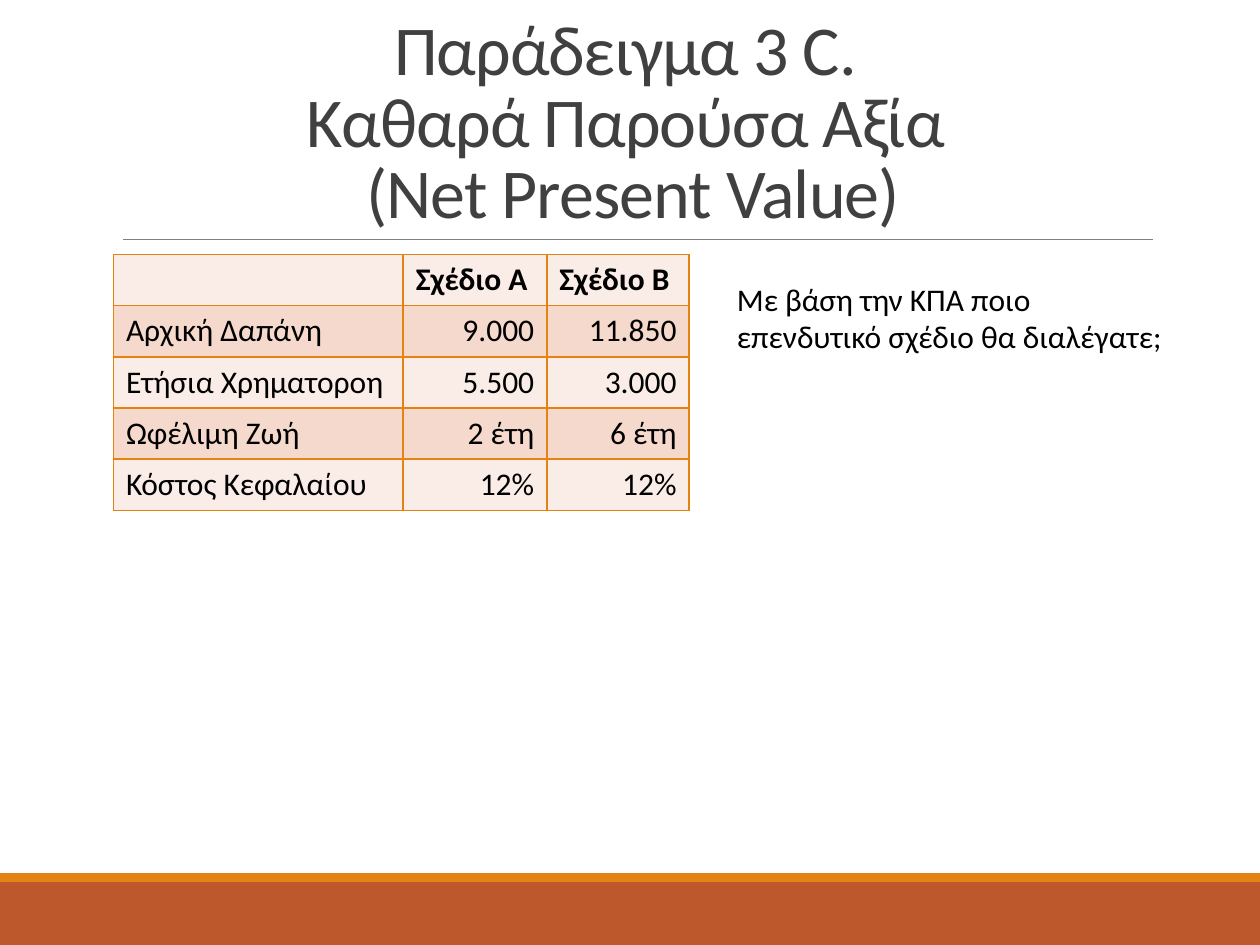
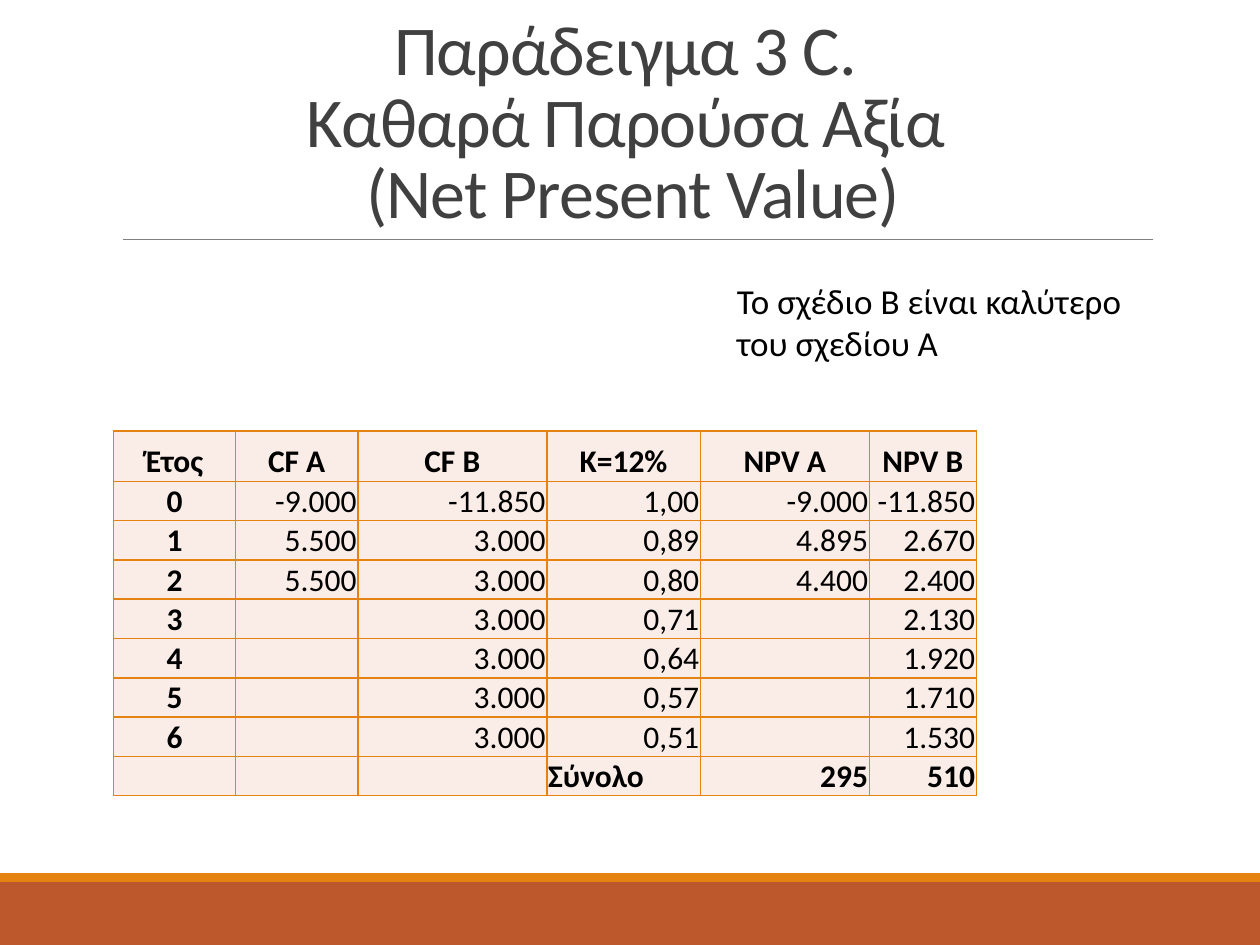
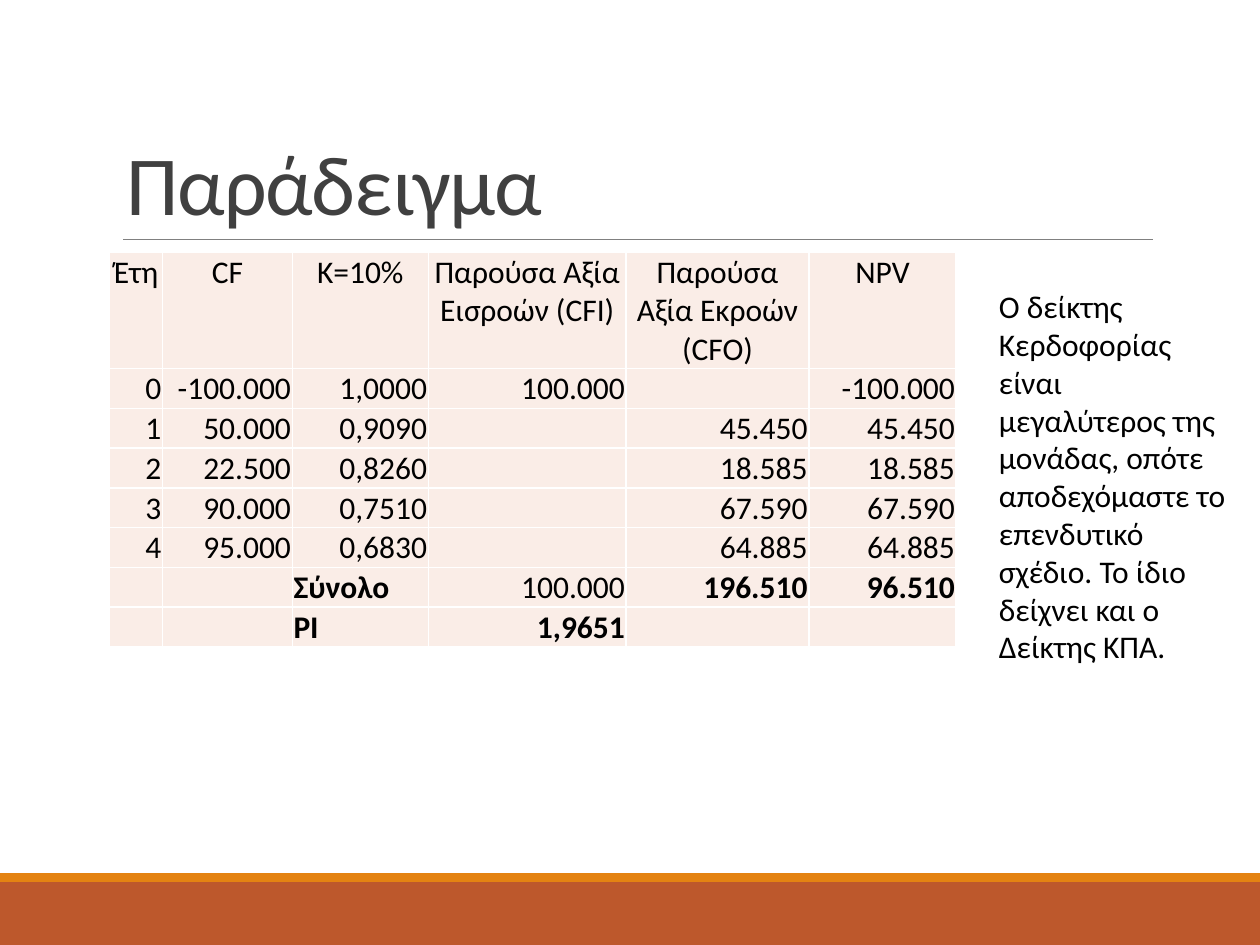
from lxml.etree import SubElement
from pptx import Presentation
from pptx.dml.color import RGBColor
from pptx.enum.shapes import MSO_CONNECTOR as CONN, MSO_SHAPE as SHAPE
from pptx.enum.text import MSO_ANCHOR as ANCHOR, MSO_AUTO_SIZE as AUTO, PP_ALIGN as ALIGN
from pptx.oxml.ns import qn
from pptx.util import Inches, Pt

COLS, ROWS = 100, 75
ALIGNS = {"l": ALIGN.LEFT, "c": ALIGN.CENTER, "r": ALIGN.RIGHT}
RUST, ORANGE, GREY, WHITE = "BD582C", "E48312", "808080", "FFFFFF"
INK, TITLE_INK = "000000", "404040"
PALE, PEACH = "FAEDE7", "F5D9CC"
TIGHT_ROW = 3.12


def rgb(code):
    return RGBColor.from_string(code)


class Deck:
    font = "Calibri"

    def __init__(self):
        self.prs = Presentation()
        self.prs.slide_width, self.prs.slide_height = Inches(10), Inches(7.5)
        self.layout = self.prs.slide_layouts[5]
        self.s = None

    def x(self, cols):
        return round(self.prs.slide_width * cols / COLS)

    def y(self, rows):
        return round(self.prs.slide_height * rows / ROWS)

    def box(self, left, top, width, height):
        return self.x(left), self.y(top), self.x(width), self.y(height)

    def slide(self, title, size=40, align="c"):
        first = self.s is None
        self.s = self.prs.slides.add_slide(self.layout)
        if first:
            self.share(self.band(70, 5, RUST), self.band(69.3, 0.7, ORANGE),
                       self.rule(9.8, 91.5, 19))
        self.title(title, size, align)

    def share(self, *shapes):
        for sp in shapes:
            self.layout.shapes.element.append(sp.element)

    def band(self, top, height, colour):
        sp = self.s.shapes.add_shape(SHAPE.RECTANGLE, *self.box(0, top, COLS, height))
        sp.shadow.inherit = False
        sp.fill.solid()
        sp.fill.fore_color.rgb = rgb(colour)
        sp.line.fill.background()
        return sp

    def rule(self, left, right, top):
        line = self.s.shapes.add_connector(
            CONN.STRAIGHT, self.x(left), self.y(top), self.x(right), self.y(top))
        line.line.color.rgb = rgb(GREY)
        line.line.width = Pt(0.5)
        SubElement(line.element.spPr, qn("a:effectLst"))
        return line

    def style(self, p, size, colour=INK, bold=False, align="l"):
        p.alignment = ALIGNS[align]
        for r in p.runs:
            r.font.name, r.font.size, r.font.bold = self.font, Pt(size), bold
            r.font.color.rgb = rgb(colour)

    def title(self, text, size, align):
        sp = self.s.shapes.title
        sp.left, sp.top, sp.width, sp.height = self.box(9, 3.1, 82.5, 15.9)
        tf = sp.text_frame
        tf.auto_size, tf.vertical_anchor, tf.word_wrap = AUTO.NONE, ANCHOR.BOTTOM, True
        p = tf.paragraphs[0]
        p.text = text
        p.line_spacing = 0.85
        self.style(p, size, TITLE_INK, align=align)
        for r in p.runs:
            r.font._element.set("spc", "-50")

    def note(self, text, box, size=18):
        tf = self.s.shapes.add_textbox(*self.box(*box)).text_frame
        tf.word_wrap, tf.auto_size = True, AUTO.SHAPE_TO_FIT_TEXT
        tf.text = text
        self.style(tf.paragraphs[0], size)

    def borders(self, cell, colour):
        tc_pr = cell._tc.get_or_add_tcPr()
        for side in ("lnL", "lnR", "lnT", "lnB"):
            ln = SubElement(tc_pr, qn("a:" + side), w=str(Pt(1)))
            fill = SubElement(ln, qn("a:solidFill"))
            SubElement(fill, qn("a:srgbClr"), val=colour)

    def table(self, at, widths, heights, rows, looks, border=ORANGE, fills=(PALE,),
              tight=True, anchor=ANCHOR.BOTTOM, head_anchor=ANCHOR.BOTTOM):
        """Each letter of a look aligns one cell; a capital makes it bold."""
        t = self.s.shapes.add_table(
            len(rows), len(widths), *self.box(*at, sum(widths), sum(heights))).table
        t.first_row = t.horz_banding = False
        for col, width in zip(t.columns, widths):
            col.width = self.x(width)
        for i, (row, height) in enumerate(zip(t.rows, heights)):
            row.height = self.y(height)
            for cell, text, look in zip(row.cells, rows[i], looks[i]):
                self.borders(cell, border)
                cell.fill.solid()
                cell.fill.fore_color.rgb = rgb(fills[i % len(fills)])
                cell.vertical_anchor = anchor if i else head_anchor
                if tight:
                    cell.margin_left = cell.margin_right = cell.margin_top = Inches(0.01)
                    cell.margin_bottom = 0
                p = cell.text_frame.paragraphs[0]
                p.text = text
                self.style(p, 18, bold=look.isupper(), align=look.lower())


def main():
    deck = Deck()
    npv_title = "Παράδειγμα 3 C. \nΚαθαρά Παρούσα Αξία \n(Net Present Value)"

    deck.slide(npv_title)
    deck.table(
        (9, 20.2), (23, 11.4, 11.3), [4.06] * 5,
        [("", "Σχέδιο Α", "Σχέδιο Β"),
         ("Αρχική Δαπάνη", "9.000", "11.850"),
         ("Ετήσια Χρηματοροη", "5.500", "3.000"),
         ("Ωφέλιμη Ζωή", "2 έτη", "6 έτη"),
         ("Κόστος Κεφαλαίου", "12%", "12%")],
        ["LLL"] + ["lrr"] * 4, fills=(PALE, PEACH), tight=False,
        anchor=ANCHOR.TOP, head_anchor=ANCHOR.TOP)
    deck.note("Με βάση την ΚΠΑ ποιο επενδυτικό σχέδιο θα διαλέγατε;",
              (57.5, 21.7, 36.7, 7.1))

    deck.slide(npv_title)
    deck.note("Το σχέδιο Β είναι καλύτερο του σχεδίου Α",
              (57.5, 21.7, 36.7, 7.7), 20)
    deck.table(
        (9, 34.2), (9.7, 9.7, 15, 12.2, 13.4, 8.5), [4] + [TIGHT_ROW] * 8,
        [("Έτος", "CF A", "CF B", "K=12%", "NPV A", "NPV B"),
         ("0", "-9.000", "-11.850", "1,00", "-9.000", "-11.850"),
         ("1", "5.500", "3.000", "0,89", "4.895", "2.670"),
         ("2", "5.500", "3.000", "0,80", "4.400", "2.400"),
         ("3", "", "3.000", "0,71", "", "2.130"),
         ("4", "", "3.000", "0,64", "", "1.920"),
         ("5", "", "3.000", "0,57", "", "1.710"),
         ("6", "", "3.000", "0,51", "", "1.530"),
         ("", "", "", "Σύνολο", "295", "510")],
        ["CCCCCC"] + ["Crrrrr"] * 7 + ["CrrLRR"])

    deck.slide("Παράδειγμα", 48, "l")
    deck.table(
        (8.7, 20), (4.2, 10.3, 10.8, 15.7, 14.5, 11.7), [9.2] + [TIGHT_ROW] * 7,
        [("Έτη", "CF", "Κ=10%", "Παρούσα Αξία Εισροών (CFI)",
          "Παρούσα Αξία Εκροών (CFO)", "NPV"),
         ("0", "-100.000", "1,0000", "100.000", "", "-100.000"),
         ("1", "50.000", "0,9090", "", "45.450", "45.450"),
         ("2", "22.500", "0,8260", "", "18.585", "18.585"),
         ("3", "90.000", "0,7510", "", "67.590", "67.590"),
         ("4", "95.000", "0,6830", "", "64.885", "64.885"),
         ("", "", "Σύνολο", "100.000", "196.510", "96.510"),
         ("", "", "PI", "1,9651", "", "")],
        ["cccccc"] + ["rrrrrr"] * 5 + ["rrLrRR", "rrLRrr"],
        border=WHITE, head_anchor=ANCHOR.TOP)
    deck.note("O δείκτης Κερδοφορίας είναι μεγαλύτερος της μονάδας, οπότε αποδεχόμαστε "
              "το επενδυτικό σχέδιο. Το ίδιο δείχνει και ο Δείκτης ΚΠΑ.",
              (78.3, 22.3, 20, 31.3))

    deck.prs.save("out.pptx")


if __name__ == "__main__":
    main()
